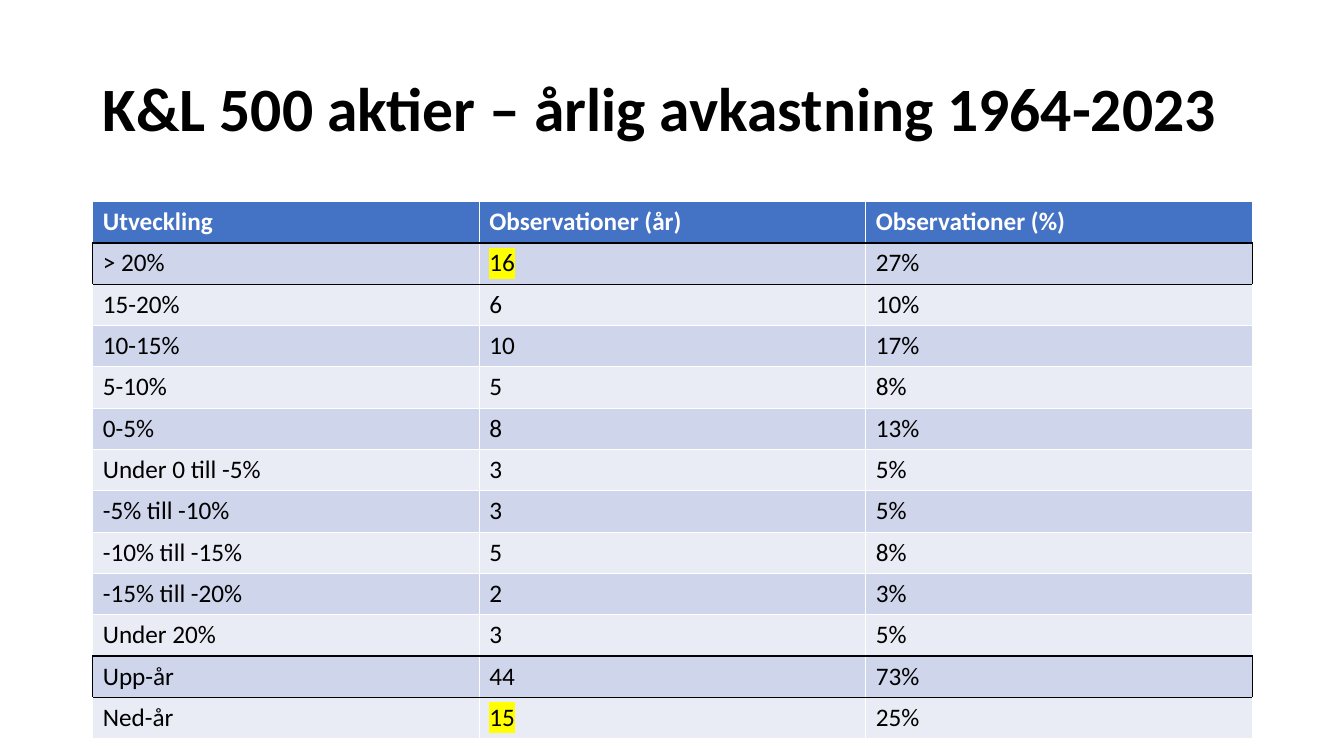
from dataclasses import dataclass

from lxml.etree import SubElement as Sub
from pptx import Presentation
from pptx.dml.color import RGBColor
from pptx.enum.text import MSO_ANCHOR as Anchor, PP_ALIGN as Align
from pptx.oxml.ns import qn
from pptx.slide import Slide
from pptx.table import Table, _Cell as Cell
from pptx.text.text import _Paragraph as Para
from pptx.util import Inches, Pt

FONT = "Calibri"
BLACK, WHITE, YELLOW = "000000", "FFFFFF", "FFFF00"
BLUE, DARK, LIGHT = "4472C4", "CFD5EA", "E9EBF5"
LEFT, WIDTH = 0.92, 11.5
HIGH = 0.41


@dataclass
class Row:
    span: str
    years: str
    share: str
    boxed: bool = False
    mark: bool = False


HEAD = Row("Utveckling", "Observationer (år)", "Observationer (%)")
ROWS = [
    HEAD,
    Row("> 20%", "16", "27%", boxed=True, mark=True),
    Row("15-20%", "6", "10%"),
    Row("10-15%", "10", "17%"),
    Row("5-10%", "5", "8%"),
    Row("0-5%", "8", "13%"),
    Row("Under 0 till -5%", "3", "5%"),
    Row("-5% till -10%", "3", "5%"),
    Row("-10% till -15%", "5", "8%"),
    Row("-15% till -20%", "2", "3%"),
    Row("Under 20%", "3", "5%"),
    Row("Upp-år", "44", "73%", boxed=True),
    Row("Ned-år", "15", "25%", mark=True),
]


def color(code: str) -> RGBColor:
    return RGBColor.from_string(code)


def style(para: Para, size: int, code: str, bold: bool) -> None:
    font = para.font
    font.name, font.size, font.bold = FONT, Pt(size), bold
    font.color.rgb = color(code)


def add_title(slide: Slide, text: str) -> None:
    title = slide.shapes.title
    title.left, title.top = Inches(LEFT), Inches(0.38)
    title.width, title.height = Inches(WIDTH), Inches(1.45)
    frame = title.text_frame
    frame.text = text
    frame.vertical_anchor = Anchor.MIDDLE
    para = frame.paragraphs[0]
    para.alignment, para.line_spacing = Align.LEFT, 0.9
    style(para, 44, BLACK, True)


def is_boxed(row: int) -> bool:
    return 0 <= row < len(ROWS) and ROWS[row].boxed


def set_edges(cell: Cell, row: int, col: int) -> None:
    box = is_boxed(row)
    edges = {
        "a:lnL": box and col == 0,
        "a:lnR": box and col == 2,
        "a:lnT": box or is_boxed(row - 1),
        "a:lnB": box or is_boxed(row + 1),
    }
    props = cell._tc.get_or_add_tcPr()
    for spot, (tag, black) in enumerate(edges.items()):
        line = Sub(props, qn(tag), w=str(Pt(1)))
        props.insert(spot, line)
        fill = Sub(line, qn("a:solidFill"))
        Sub(fill, qn("a:srgbClr"), val=BLACK if black else WHITE)


def mark_text(para: Para) -> None:
    props = para.runs[0]._r.get_or_add_rPr()
    light = Sub(props, qn("a:highlight"))
    Sub(light, qn("a:srgbClr"), val=YELLOW)


def fill_row(table: Table, num: int, row: Row) -> None:
    head = row is HEAD
    shade = BLUE if head else DARK if num % 2 else LIGHT
    table.rows[num].height = Inches(HIGH)
    for col, text in enumerate((row.span, row.years, row.share)):
        cell = table.cell(num, col)
        cell.text = text
        cell.fill.solid()
        cell.fill.fore_color.rgb = color(shade)
        para = cell.text_frame.paragraphs[0]
        style(para, 18, WHITE if head else BLACK, head)
        if row.mark and col == 1:
            mark_text(para)
        set_edges(cell, num, col)


def add_grid(slide: Slide) -> None:
    count = len(ROWS)
    table = slide.shapes.add_table(
        count, 3, Inches(LEFT), Inches(2), Inches(WIDTH), Inches(HIGH * count)
    ).table
    for num, row in enumerate(ROWS):
        fill_row(table, num, row)


def main() -> None:
    deck = Presentation()
    deck.slide_width, deck.slide_height = Inches(13.33), Inches(7.5)
    slide = deck.slides.add_slide(deck.slide_layouts[5])
    add_title(slide, "K&L 500 aktier – årlig avkastning 1964-2023")
    add_grid(slide)
    deck.save("out.pptx")


if __name__ == "__main__":
    main()
